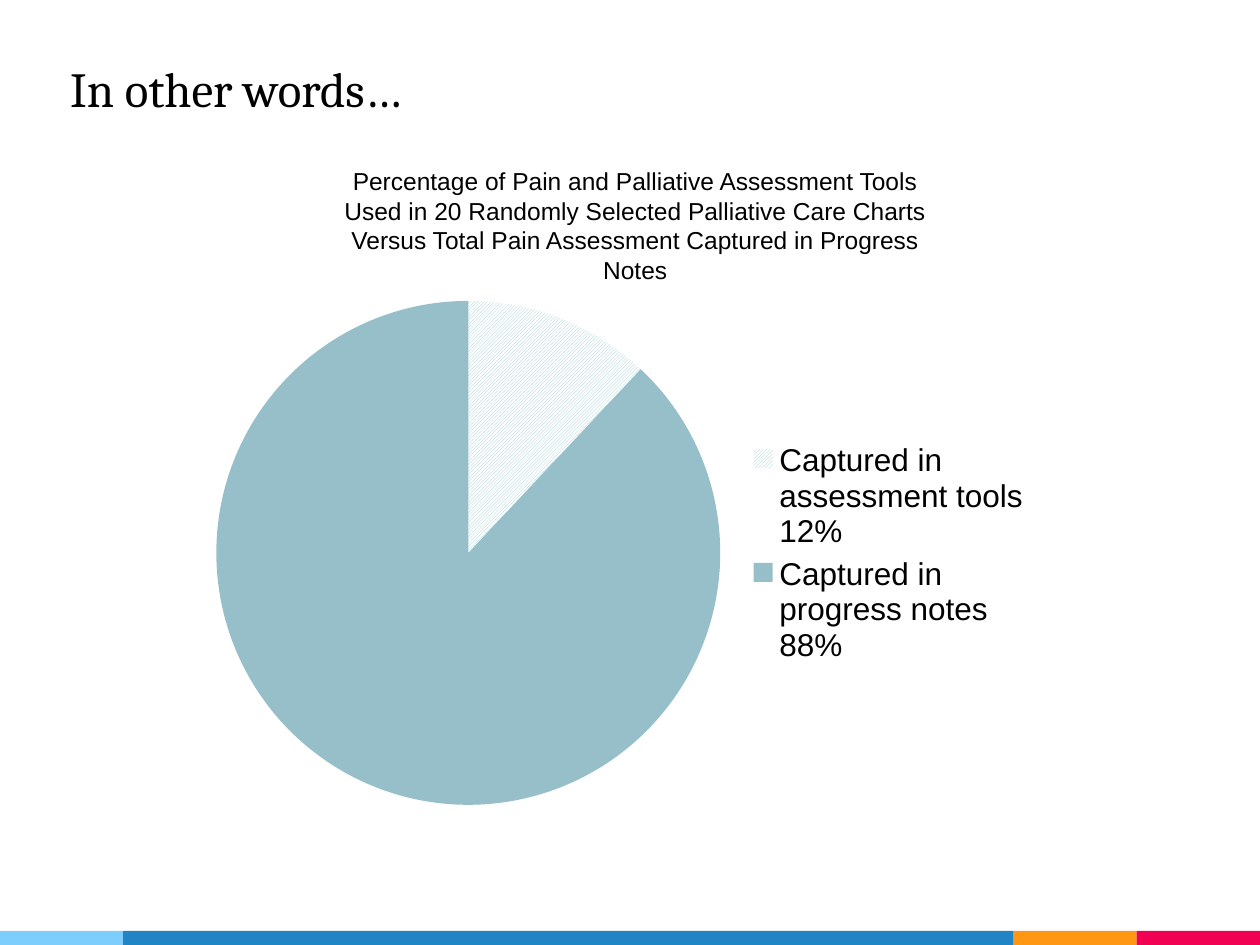
from lxml import etree
from pptx import Presentation
from pptx.chart.data import CategoryChartData
from pptx.dml.color import RGBColor
from pptx.enum.chart import XL_CHART_TYPE, XL_LEGEND_POSITION
from pptx.enum.dml import MSO_PATTERN
from pptx.enum.shapes import MSO_SHAPE
from pptx.enum.text import PP_ALIGN
from pptx.oxml.ns import qn
from pptx.util import Pt

PIE = XL_CHART_TYPE.PIE
LEGEND_RIGHT = XL_LEGEND_POSITION.RIGHT
HATCH = MSO_PATTERN.LIGHT_UPWARD_DIAGONAL
RECTANGLE = MSO_SHAPE.RECTANGLE
LEFT, CENTER = PP_ALIGN.LEFT, PP_ALIGN.CENTER

BLACK = RGBColor(0x00, 0x00, 0x00)
WHITE = RGBColor(0xFF, 0xFF, 0xFF)
TEAL = RGBColor(0x96, 0xBF, 0xC9)
PALE_TEAL = RGBColor(0x9A, 0xCA, 0xD3)
SKY = RGBColor(0x7E, 0xCE, 0xFD)
BLUE = RGBColor(0x21, 0x85, 0xC5)
ORANGE = RGBColor(0xFF, 0x97, 0x15)
RED = RGBColor(0xF2, 0x02, 0x53)

PAGE_WIDTH, PAGE_HEIGHT = 720, 540


def set_layout(parent, index, fractions, inner=False):
    """Place a chart part by fractions (x, y, w, h) of the chart area."""
    for old in parent.findall(qn("c:layout")):
        parent.remove(old)
    layout = etree.Element(qn("c:layout"))
    manual = etree.SubElement(layout, qn("c:manualLayout"))
    settings = [("layoutTarget", "inner")] if inner else []
    settings += [("xMode", "edge"), ("yMode", "edge")]
    settings += zip("xywh", fractions)
    for name, value in settings:
        etree.SubElement(manual, qn(f"c:{name}")).set("val", str(value))
    parent.insert(index, layout)


class PageBuilder:
    heading_font = "Cambria"
    body_font = "Arial"
    color = BLACK

    def __init__(self, page):
        self.page = page

    def bar(self, left, top, width, height, color):
        bar = self.page.shapes.add_shape(
            RECTANGLE, Pt(left), Pt(top), Pt(width), Pt(height))
        bar.shadow.inherit = False
        bar.fill.solid()
        bar.fill.fore_color.rgb = color
        bar.line.fill.background()

    def text(self, left, top, width, height, words, size, font, align=LEFT):
        box = self.page.shapes.add_textbox(
            Pt(left), Pt(top), Pt(width), Pt(height))
        box.text_frame.word_wrap = True
        para = box.text_frame.paragraphs[0]
        para.alignment = align
        span = para.add_run()
        span.text = words
        span.font.name = font
        span.font.size = Pt(size)
        span.font.color.rgb = self.color

    def pie(self, left, top, width, height, shares, size):
        data = CategoryChartData()
        data.categories = list(shares)
        data.add_series("Series 1", list(shares.values()))
        chart = self.page.shapes.add_chart(
            PIE, Pt(left), Pt(top), Pt(width), Pt(height), data).chart
        chart.has_title = False
        chart.font.name = self.body_font
        chart.font.size = Pt(size)
        chart.font.color.rgb = self.color
        chart.has_legend = True
        chart.legend.position = LEGEND_RIGHT
        chart.legend.include_in_layout = False
        plot = chart.plots[0]
        plot.vary_by_categories = True

        # Slices: hatched for tools, solid for notes
        tools, notes = (plot.series[0].points[i].format for i in range(2))
        tools.fill.patterned()
        tools.fill.pattern = HATCH
        tools.fill.fore_color.rgb = PALE_TEAL
        tools.fill.back_color.rgb = WHITE
        notes.fill.solid()
        notes.fill.fore_color.rgb = TEAL
        for piece in (tools, notes):
            piece.line.fill.background()

        plot_area = chart.element.find(".//" + qn("c:plotArea"))
        set_layout(plot_area, 0, (0.02, 0.05, 0.6, 0.9), inner=True)
        set_layout(chart.legend._element, 1, (0.65, 0.29, 0.34, 0.42))


def main():
    deck = Presentation()
    deck.slide_width, deck.slide_height = Pt(PAGE_WIDTH), Pt(PAGE_HEIGHT)
    builder = PageBuilder(deck.slides.add_slide(deck.slide_layouts[6]))

    # Colour strip along the bottom
    short, strip = 70.4, 8
    long = PAGE_WIDTH - 3 * short
    left = 0
    for width, color in ((short, SKY), (long, BLUE),
                         (short, ORANGE), (short, RED)):
        builder.bar(left, PAGE_HEIGHT - strip, width, strip, color)
        left += width

    # Title
    builder.text(33, 30, 348, 109, "In other words…", 28,
                 builder.heading_font)

    # Pie chart and its heading
    builder.pie(114, 156, 480, 320, {
        "Captured in assessment tools 12%": 12,
        "Captured in progress notes 88%": 88,
    }, 18)
    builder.text(180, 91.5, 366, 75,
                 "Percentage of Pain and Palliative Assessment Tools Used in "
                 "20 Randomly Selected Palliative Care Charts Versus Total "
                 "Pain Assessment Captured in Progress Notes",
                 14, builder.body_font, CENTER)

    deck.save("out.pptx")


if __name__ == "__main__":
    main()
